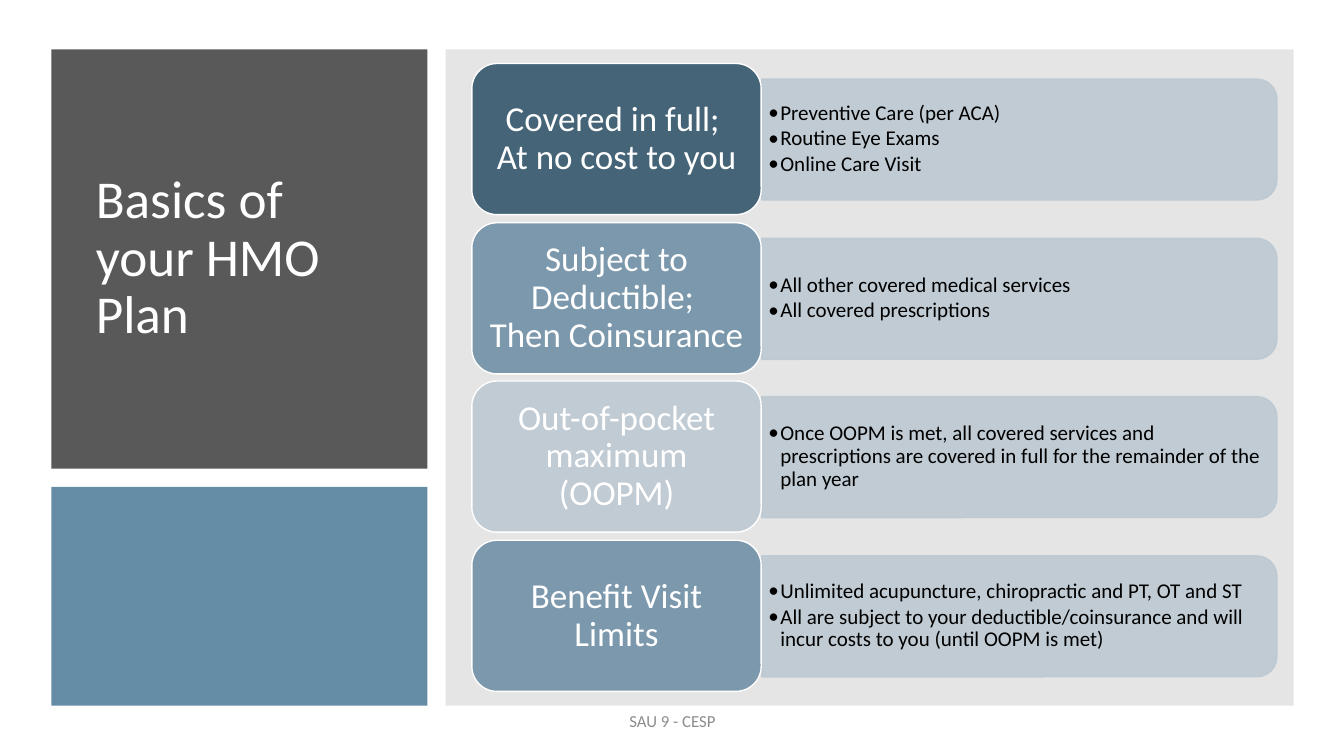
from dataclasses import dataclass

import lxml.etree
import pptx
import pptx.dml.color
import pptx.enum.shapes
import pptx.enum.text
import pptx.oxml.ns
import pptx.util

EMU_PER_PX = 9144
FONT = "Calibri"
ROW_TOP, ROW_COUNT, ROW_SPAN = 63, 4, 473
COLORS = {
    "white": "FFFFFF", "black": "000000", "charcoal": "595959", "blue": "5D87A1",
    "gray": "808080", "footer": "8C8C8C", "band": "BDC9D2", "navy": "456477",
    "steel": "7C98AC", "mist": "C1CBD4",
}
SHAPES = pptx.enum.shapes.MSO_SHAPE
ALIGN = pptx.enum.text.PP_ALIGN


@dataclass(frozen=True)
class Topic:
    heading: str
    color: str
    points: tuple[str, ...]


@dataclass(frozen=True)
class Panel:
    left: int
    top: int
    width: int
    height: int
    color: str
    opacity: int


TOPICS = (
    Topic("Covered in full; \nAt no cost to you", "navy",
          ("Preventive Care (per ACA)", "Routine Eye Exams", "Online Care Visit")),
    Topic("Subject to Deductible; \nThen Coinsurance", "steel",
          ("All other covered medical services", "All covered prescriptions")),
    Topic("Out-of-pocket maximum\n(OOPM)", "mist",
          ("Once OOPM is met, all covered services and prescriptions are covered "
           "in full for the remainder of the plan year",)),
    Topic("Benefit Visit Limits", "steel",
          ("Unlimited acupuncture, chiropractic and PT, OT and ST",
           "All are subject to your deductible/coinsurance and will incur costs "
           "to you (until OOPM is met)")),
)
PANELS = (
    Panel(51, 49, 373, 416, "charcoal", 100),
    Panel(51, 483, 373, 217, "blue", 95),
    Panel(442, 49, 841, 651, "gray", 20),
)


def px(length: int) -> pptx.util.Emu:
    return pptx.util.Emu(length * EMU_PER_PX)


def rgb(name: str) -> pptx.dml.color.RGBColor:
    return pptx.dml.color.RGBColor.from_string(COLORS[name])


def set_opacity(shape, percent: int) -> None:
    for color in shape._element.spPr.iter(pptx.oxml.ns.qn("a:srgbClr")):
        alpha = lxml.etree.SubElement(color, pptx.oxml.ns.qn("a:alpha"))
        alpha.set("val", str(percent * 1000))


def add_block(page, kind, left: int, top: int, width: int, height: int, *,
              fill: str, line: str | None = None, opacity: int = 100):
    shape = page.shapes.add_shape(kind, px(left), px(top), px(width), px(height))
    shape.shadow.inherit = False
    shape.fill.solid()
    shape.fill.fore_color.rgb = rgb(fill)
    if line:
        shape.line.color.rgb = rgb(line)
        shape.line.width = pptx.util.Pt(1)
    else:
        shape.line.fill.background()
    if opacity < 100:
        set_opacity(shape, opacity)
    return shape


def add_bullet(para) -> None:
    para.level = 1
    properties = para._p.get_or_add_pPr()
    properties.set("marL", str(px(12)))
    properties.set("indent", str(px(-12)))
    typeface = lxml.etree.SubElement(properties, pptx.oxml.ns.qn("a:buFont"))
    typeface.set("typeface", FONT)
    bullet = lxml.etree.SubElement(properties, pptx.oxml.ns.qn("a:buChar"))
    bullet.set("char", "•")


def write_text(shape, *lines: str, size: int, color: str, align=ALIGN.LEFT,
               inset: tuple[int, int] = (10, 5), spacing: float = 0.9,
               after: int = 0, bullets: bool = False) -> None:
    frame = shape.text_frame
    frame.word_wrap = True
    frame.auto_size = pptx.enum.text.MSO_AUTO_SIZE.NONE
    frame.vertical_anchor = pptx.enum.text.MSO_ANCHOR.MIDDLE
    frame.margin_left = frame.margin_right = px(inset[0])
    frame.margin_top = frame.margin_bottom = px(inset[1])
    for index, line in enumerate(lines):
        para = frame.add_paragraph() if index else frame.paragraphs[0]
        para.text = line
        para.alignment = align
        para.line_spacing = spacing
        para.space_after = pptx.util.Pt(after)
        if bullets:
            add_bullet(para)
        for span in para.runs:
            span.font.name = FONT
            span.font.size = pptx.util.Pt(size)
            span.font.color.rgb = rgb(color)


def add_text(page, left: int, top: int, width: int, height: int, *lines: str, **style) -> None:
    box = page.shapes.add_textbox(px(left), px(top), px(width), px(height))
    write_text(box, *lines, **style)


def draw_topic(page, topic: Topic, top: int) -> None:
    band = add_block(page, SHAPES.ROUND_2_SAME_RECTANGLE, 951, top - 180, 120, 511,
                     fill="band", line="band", opacity=90)
    band.rotation = 90
    add_text(page, 756, top + 21, 505, 108, *topic.points, size=15, color="black",
             inset=(6, 3), after=2, bullets=True)
    label = add_block(page, SHAPES.ROUNDED_RECTANGLE, 468, top, 287, 150,
                      fill=topic.color, line="white")
    write_text(label, topic.heading, size=25, color="white", align=ALIGN.CENTER)


def draw_title(page) -> None:
    title = page.shapes.title
    title.left, title.top, title.width, title.height = px(85), px(80), px(311), px(354)
    write_text(title, "Basics of your HMO Plan", size=38, color="white")
    page.shapes._spTree.append(title._element)


def main() -> None:
    deck = pptx.Presentation()
    deck.slide_width, deck.slide_height = px(1333), px(750)
    page = deck.slides.add_slide(deck.slide_layouts[5])
    for panel in PANELS:
        add_block(page, SHAPES.RECTANGLE, panel.left, panel.top, panel.width,
                  panel.height, fill=panel.color, opacity=panel.opacity)
    draw_title(page)
    for index, topic in enumerate(TOPICS):
        draw_topic(page, topic, ROW_TOP + round(index * ROW_SPAN / (ROW_COUNT - 1)))
    add_text(page, 442, 695, 450, 40, "SAU 9 - CESP", size=12, color="footer",
             align=ALIGN.CENTER, spacing=1.0)
    deck.save("out.pptx")


if __name__ == "__main__":
    main()
